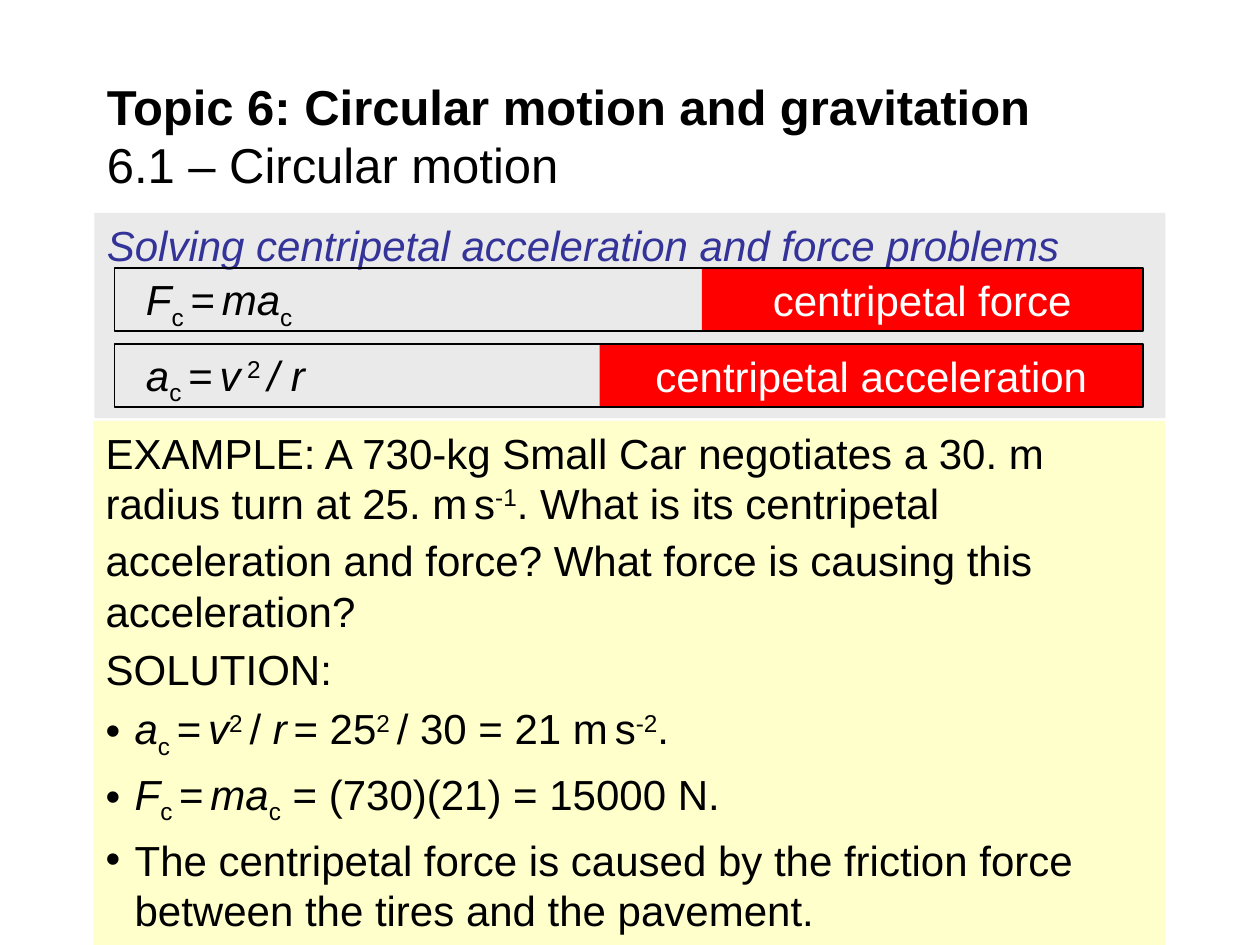
import pptx
import pptx.util
import pptx.dml.color
import pptx.enum.shapes
import pptx.enum.text
import lxml.etree

Inches, Pt = pptx.util.Inches, pptx.util.Pt
RGBColor = pptx.dml.color.RGBColor
ALIGN, ANCHOR = pptx.enum.text.PP_ALIGN, pptx.enum.text.MSO_ANCHOR
RECTANGLE = pptx.enum.shapes.MSO_SHAPE.RECTANGLE

BLACK = RGBColor(0, 0, 0)
WHITE = RGBColor(255, 255, 255)
BLUE = RGBColor(0x33, 0x33, 0x99)
GRAY = RGBColor(0xEA, 0xEA, 0xEA)
YELLOW = RGBColor(0xFF, 0xFF, 0xCC)
RED = RGBColor(255, 0, 0)

# A span is (text, style); style letters: b bold, i italic, ^ superscript, _ subscript.
# Subscript spaces are the narrow gaps inside formulas and units.
GAP = (" ", "_")
FORCE = [("F", "i"), ("c ", "_"), ("=", ""), GAP, ("ma", "i"), ("c", "_")]
ACCELERATION = [("a", "i"), ("c ", "_"), ("=", ""), GAP, ("v", "i")]

TITLE = [[("Topic 6: Circular motion and gravitation\v", "b"), ("6.1 – Circular motion", "")]]
HEADING = [[("Solving centripetal acceleration and force problems", "i")]]
# formula, its label, top of the row, left edge of the label
FORMULAS = [
    (FORCE, "centripetal force", 2.13, 5.57),
    (ACCELERATION + [(" 2 ", "^"), ("/ r", "i")], "centripetal acceleration", 2.73, 4.76),
]
QUESTION = [
    [("EXAMPLE: A 730-kg Small Car negotiates a 30. m radius turn at 25. m", ""), GAP,
     ("s", ""), ("-1", "^"),
     (". What is its centripetal acceleration and force? "
      "What force is causing this acceleration?", "")],
    [("SOLUTION:", "")],
]
SOLUTION = [
    ACCELERATION + [("2 ", "^"), ("/ ", ""), ("r", "i"), GAP, ("= 25", ""), ("2 ", "^"),
                    ("/ 30 = 21 m", ""), GAP, ("s", ""), ("-2", "^"), (".", "")],
    FORCE + [(" = (730)(21) = 15000 N.", "")],
    [("The centripetal force is caused by the friction force "
      "between the tires and the pavement.", "")],
]

ROW_LEFT, ROW_RIGHT, ROW_HEIGHT = 0.91, 9.07, 0.5
BULLET_INDENT = 0.23


def add_panel(page, left, top, width, height, fill=None, line=None):
    box = page.shapes.add_shape(RECTANGLE, Inches(left), Inches(top), Inches(width), Inches(height))
    box.shadow.inherit = False
    if fill is None:
        box.fill.background()
    else:
        box.fill.solid()
        box.fill.fore_color.rgb = fill
    if line is None:
        box.line.fill.background()
    else:
        box.line.color.rgb = line
        box.line.width = Pt(1)
    return box


def add_text_box(page, left, top, width, height):
    return page.shapes.add_textbox(Inches(left), Inches(top), Inches(width), Inches(height))


def add_bullet(para):
    properties = para._p.get_or_add_pPr()
    properties.set("marL", str(Inches(BULLET_INDENT)))
    properties.set("indent", str(-Inches(BULLET_INDENT)))
    for tag, name, value in (("buFont", "typeface", "Arial"), ("buChar", "char", "•")):
        lxml.etree.SubElement(properties, pptx.oxml.ns.qn("a:" + tag)).set(name, value)


def add_span(para, text, style, size, color):
    span = para.add_run()
    span.text = text
    font = span.font
    font.name, font.size = "Arial", Pt(size)
    font.bold, font.italic = "b" in style, "i" in style
    font.color.rgb = color
    for mark, baseline in (("^", "30000"), ("_", "-25000")):
        if mark in style:
            span._r.get_or_add_rPr().set("baseline", baseline)


def write(box, paragraphs, size=24, color=BLACK, align=ALIGN.LEFT, anchor=ANCHOR.TOP,
          spacing=None, bullets_from=None):
    """Fill a box with paragraphs, bulleted from the given index on."""
    frame = box.text_frame
    frame.word_wrap = True
    frame.vertical_anchor = anchor
    for index, spans in enumerate(paragraphs):
        para = frame.add_paragraph() if index else frame.paragraphs[0]
        para.alignment = align
        para.line_spacing = spacing
        if index:
            para.space_before = Pt(0.2 * size)
        if bullets_from is not None and index >= bullets_from:
            add_bullet(para)
        for text, style in spans:
            lines = text.split("\v")
            for number, line in enumerate(lines):
                if number:
                    para.add_line_break()
                if line:
                    add_span(para, line, style, size, color)


def add_formula_row(page, formula, label, top, label_left):
    write(add_text_box(page, 1.06, top, 2.25, 0.46), [formula], spacing=0.9)
    label_box = add_panel(page, label_left, top, ROW_RIGHT - label_left, ROW_HEIGHT, RED)
    write(label_box, [[(label, "")]], color=WHITE, align=ALIGN.CENTER)
    add_panel(page, ROW_LEFT, top, ROW_RIGHT - ROW_LEFT, ROW_HEIGHT, line=BLACK)


def main():
    deck = pptx.Presentation()
    deck.slide_width, deck.slide_height = Inches(10), Inches(7.5)
    page = deck.slides.add_slide(deck.slide_layouts[6])

    write(add_panel(page, 0.75, 1.69, 8.5, 1.63, GRAY), HEADING, color=BLUE)
    write(add_text_box(page, 0.75, 0.58, 8.5, 0.98), TITLE, size=28, anchor=ANCHOR.MIDDLE)
    write(add_panel(page, 0.74, 3.34, 8.51, 4.16, YELLOW), QUESTION + SOLUTION,
          bullets_from=len(QUESTION))
    for row in FORMULAS:
        add_formula_row(page, *row)

    deck.save("out.pptx")


if __name__ == "__main__":
    main()
